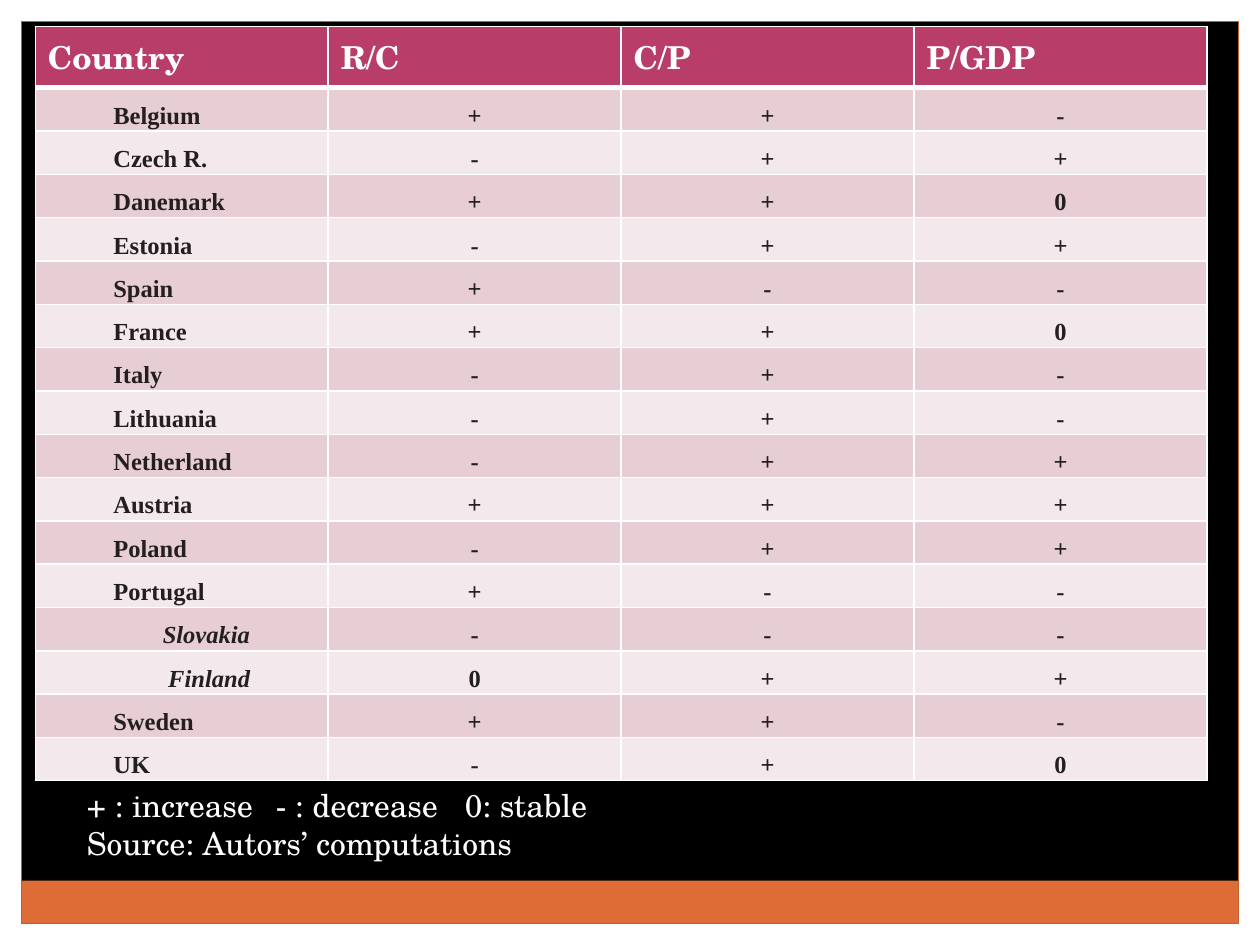
from lxml import etree
from pptx import Presentation
from pptx import util as u
from pptx.dml.color import RGBColor
from pptx.enum import shapes, text
from pptx.oxml import ns

WHITE = RGBColor(0xFF, 0xFF, 0xFF)
BLACK = RGBColor(0, 0, 0)
ORANGE = RGBColor(0xDE, 0x6C, 0x36)
RUST = RGBColor(0xC4, 0x5F, 0x30)
CRIMSON = RGBColor(0xB8, 0x3D, 0x68)
BANDS = (RGBColor(0xE6, 0xCE, 0xD4), RGBColor(0xF3, 0xE8, 0xEB))
INK = RGBColor(0x23, 0x1E, 0x1F)
HEADING_FONT, BODY_FONT = "TeX Gyre Schola", "Times New Roman"

WIDTH, HEIGHT = 10, 7.5
MARGIN = 0.17
TABLE_LEFT, TABLE_TOP, TABLE_WIDTH, TABLE_HEIGHT = 0.28, 0.21, 9.3, 5.98
HEADER_HEIGHT = 0.48
NAME_INDENT = 0.62

HEADERS = ("Country", "R/C", "C/P", "P/GDP")
# Country and the signs of its three ratios
COUNTRIES = (
    ("Belgium", "++-"), ("Czech R.", "-++"), ("Danemark", "++0"),
    ("Estonia", "-++"), ("Spain", "+--"), ("France", "++0"),
    ("Italy", "-+-"), ("Lithuania", "-+-"), ("Netherland", "-++"),
    ("Austria", "+++"), ("Poland", "-++"), ("Portugal", "+--"),
    ("Slovakia", "---"), ("Finland", "0++"), ("Sweden", "++-"),
    ("UK", "-+0"),
)
ITALIC_COUNTRIES = ("Slovakia", "Finland")


def add_rectangle(slide, left, top, width, height, fill=None, line=None):
    shape = slide.shapes.add_shape(
        shapes.MSO_SHAPE.RECTANGLE,
        *(u.Inches(length) for length in (left, top, width, height)))
    shape.shadow.inherit = False
    if fill is None:
        shape.fill.background()
    else:
        shape.fill.solid()
        shape.fill.fore_color.rgb = fill
    if line is None:
        shape.line.fill.background()
    else:
        shape.line.color.rgb = line
        shape.line.width = u.Pt(0.75)


def format_runs(paragraph, font_name, size, color, bold=False, italic=False):
    for run in paragraph.runs:
        font = run.font
        font.name, font.size = font_name, u.Pt(size)
        font.bold, font.italic = bold, italic
        font.color.rgb = color


def set_borders(cell, top=1, bottom=1):
    properties = cell._tc.get_or_add_tcPr()
    widths = {"a:lnL": 1, "a:lnR": 1, "a:lnT": top, "a:lnB": bottom}
    for position, (tag, width) in enumerate(widths.items()):
        line = etree.Element(ns.qn(tag), w=str(u.Pt(width)))
        fill = etree.SubElement(line, ns.qn("a:solidFill"))
        etree.SubElement(fill, ns.qn("a:srgbClr"), val=str(WHITE))
        properties.insert(position, line)


def fill_cell(cell, content, color):
    cell.text_frame.text = content
    cell.fill.solid()
    cell.fill.fore_color.rgb = color
    return cell.text_frame.paragraphs[0]


def add_header_cell(cell, content):
    paragraph = fill_cell(cell, content, CRIMSON)
    format_runs(paragraph, HEADING_FONT, 18, WHITE, bold=True)
    cell.vertical_anchor = text.MSO_ANCHOR.MIDDLE
    set_borders(cell, bottom=3)


def add_body_cell(cell, content, row, column):
    paragraph = fill_cell(cell, content, BANDS[(row - 1) % 2])
    italic = content in ITALIC_COUNTRIES
    format_runs(paragraph, BODY_FONT, 14, INK, bold=True, italic=italic)
    paragraph.line_spacing = 1.15
    cell.margin_left = cell.margin_right = cell.margin_bottom = 0
    cell.margin_top = u.Pt(6)
    if column > 0:
        paragraph.alignment = text.PP_ALIGN.CENTER
    elif italic:
        paragraph.alignment = text.PP_ALIGN.RIGHT
        cell.margin_right = u.Inches(NAME_INDENT)
    else:
        cell.margin_left = u.Inches(NAME_INDENT)
    set_borders(cell, top=3 if row == 1 else 1)


def add_country_table(slide):
    table = slide.shapes.add_table(
        len(COUNTRIES) + 1, len(HEADERS),
        u.Inches(TABLE_LEFT), u.Inches(TABLE_TOP),
        u.Inches(TABLE_WIDTH), u.Inches(TABLE_HEIGHT)).table
    table.horz_banding = False
    body_height = (TABLE_HEIGHT - HEADER_HEIGHT) / len(COUNTRIES)
    for index, row in enumerate(table.rows):
        row.height = u.Inches(body_height if index else HEADER_HEIGHT)
    for column, header in enumerate(HEADERS):
        add_header_cell(table.cell(0, column), header)
    for row, (country, signs) in enumerate(COUNTRIES, start=1):
        for column, content in enumerate((country, *signs)):
            add_body_cell(table.cell(row, column), content, row, column)


def add_legend(slide):
    box = slide.shapes.add_textbox(
        u.Inches(0.59), u.Inches(6.19), u.Inches(8.58), u.Inches(0.71))
    frame = box.text_frame
    frame.word_wrap = True
    frame.text = ("+ : increase\t- : decrease\t0: stable\n"
                  "Source: Autors’ computations")
    for paragraph in frame.paragraphs:
        format_runs(paragraph, HEADING_FONT, 18, WHITE)


def add_frame(slide):
    # White margins on all four sides
    add_rectangle(slide, 0, HEIGHT - MARGIN, WIDTH, MARGIN, WHITE)
    add_rectangle(slide, 0, 0, WIDTH, MARGIN, WHITE)
    add_rectangle(slide, WIDTH - MARGIN, 0, MARGIN, HEIGHT, WHITE)
    add_rectangle(slide, 0, 0, MARGIN, HEIGHT, WHITE)
    # Footer band and outline
    inner_width, inner_height = WIDTH - 2 * MARGIN, HEIGHT - 2 * MARGIN
    add_rectangle(slide, MARGIN, 6.99, inner_width, 0.34, ORANGE)
    add_rectangle(slide, MARGIN, MARGIN, inner_width, inner_height, line=RUST)


def main():
    presentation = Presentation()
    presentation.slide_width = u.Inches(WIDTH)
    presentation.slide_height = u.Inches(HEIGHT)
    slide = presentation.slides.add_slide(presentation.slide_layouts[6])
    slide.background.fill.solid()
    slide.background.fill.fore_color.rgb = BLACK
    add_frame(slide)
    add_country_table(slide)
    add_legend(slide)
    presentation.save("out.pptx")


if __name__ == "__main__":
    main()
